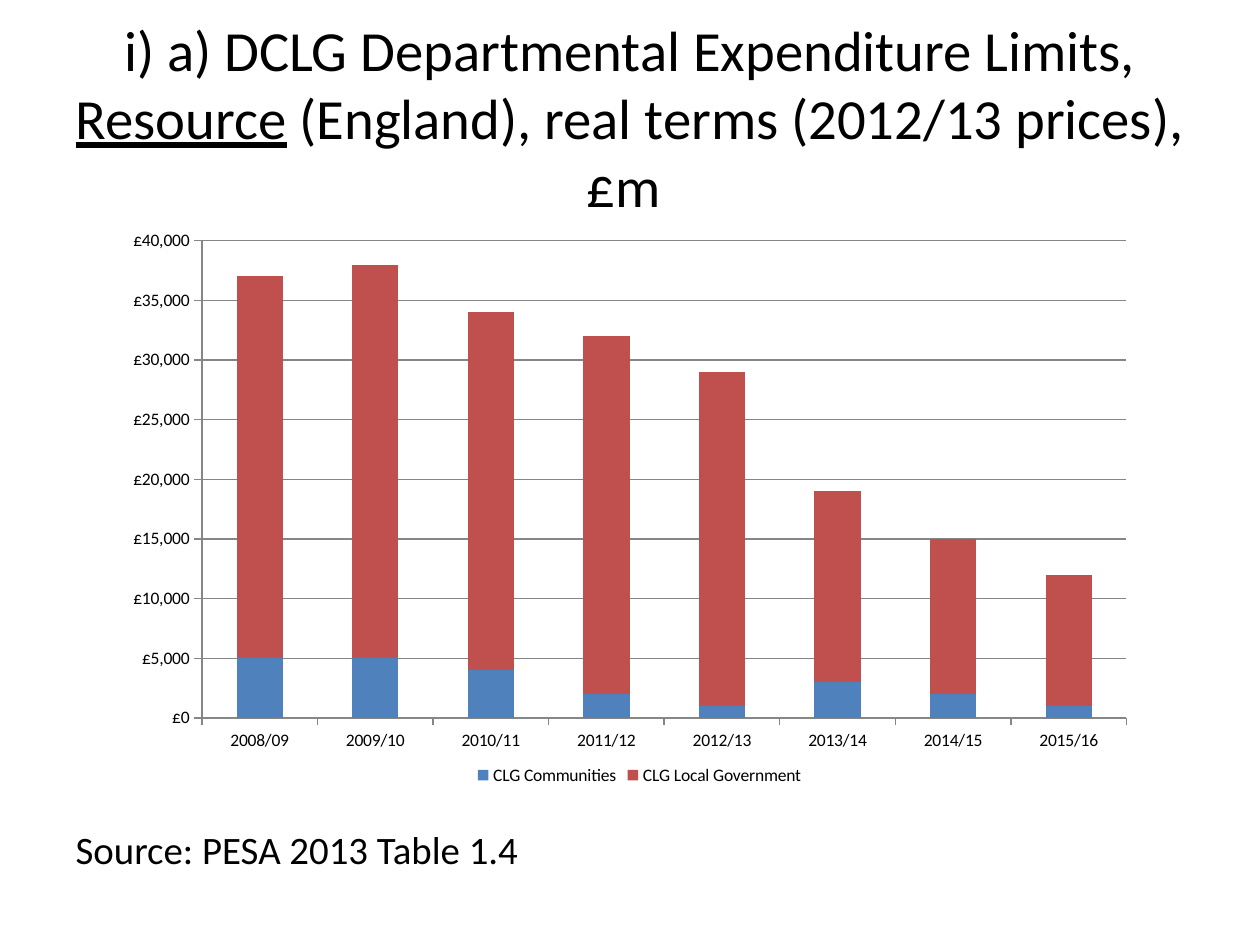
"""Build a slide with a stacked column chart of departmental spending limits."""
import dataclasses
import typing

import lxml.etree
import pptx
import pptx.chart.data
import pptx.dml.color
import pptx.enum.chart
import pptx.enum.text
import pptx.oxml
import pptx.oxml.ns
import pptx.util

BLACK = pptx.dml.color.RGBColor(0x00, 0x00, 0x00)
GREY = pptx.dml.color.RGBColor(0x86, 0x86, 0x86)
BLUE = pptx.dml.color.RGBColor(0x4F, 0x81, 0xBD)
RED = pptx.dml.color.RGBColor(0xC0, 0x50, 0x4D)
FACE = "Calibri"
MONEY = '"£"#,##0'
WIDE = pptx.util.Inches(10)
HIGH = pptx.util.Inches(7.5)


class Box(typing.NamedTuple):
    """Hold a place in percent of the slide's width and height."""
    left: float
    top: float
    width: float
    height: float

    def scale(self) -> list[int]:
        sides = (WIDE, HIGH, WIDE, HIGH)
        return [round(part * side / 100) for part, side in zip(self, sides)]


@dataclasses.dataclass
class Series:
    name: str
    color: pptx.dml.color.RGBColor
    vals: tuple[int, ...]


class Piece(typing.NamedTuple):
    text: str
    under: bool = False


TITLE = (
    Piece("i) a) DCLG Departmental Expenditure Limits, "),
    Piece("Resource", True),
    Piece(" (England), real terms (2012/13 prices), £m "),
)
YEARS = ("2008/09", "2009/10", "2010/11", "2011/12",
         "2012/13", "2013/14", "2014/15", "2015/16")
SERIES = (
    Series("CLG Communities", BLUE,
           (5000, 5000, 4000, 2000, 1000, 3000, 2000, 1000)),
    Series("CLG Local Government", RED,
           (32000, 33000, 30000, 30000, 28000, 16000, 13000, 11000)),
)
TITLE_BOX = Box(5, 4, 90, 16.67)
CHART_BOX = Box(9.8, 22.67, 81.9, 60.93)
NOTE_BOX = Box(5, 85.8, 90, 8)
PLOT = Box(7.6, 4.6, 89.6, 82.9)


def style(font, size: float) -> None:
    font.name = FACE
    font.size = pptx.util.Pt(size)
    font.color.rgb = BLACK


def fill_text(shape, box: Box, parts: tuple[Piece, ...], size: float, align) -> None:
    shape.left, shape.top, shape.width, shape.height = box.scale()
    frame = shape.text_frame
    frame.word_wrap = True
    frame.auto_size = pptx.enum.text.MSO_AUTO_SIZE.NONE
    frame.vertical_anchor = pptx.enum.text.MSO_ANCHOR.MIDDLE
    line = frame.paragraphs[0]
    line.alignment = align
    for part in parts:
        run = line.add_run()
        run.text = part.text
        style(run.font, size)
        run.font.underline = part.under


def drop_bullet(line) -> None:
    props = line._p.get_or_add_pPr()
    props.set("marL", "0")
    props.set("indent", "0")
    lxml.etree.SubElement(props, pptx.oxml.ns.qn("a:buNone"))


def place_plot(chart) -> None:
    rules = [("layoutTarget", "inner"), ("xMode", "edge"), ("yMode", "edge")]
    rules += [(key, f"{part / 100:.3f}") for key, part in zip("xywh", PLOT)]
    area = chart._chartSpace.chart.plotArea
    for old in area.findall(pptx.oxml.ns.qn("c:layout")):
        area.remove(old)
    layout = pptx.oxml.parse_xml(f"<c:layout {pptx.oxml.ns.nsdecls('c')}/>")
    area.insert(0, layout)
    manual = lxml.etree.SubElement(layout, pptx.oxml.ns.qn("c:manualLayout"))
    for key, val in rules:
        lxml.etree.SubElement(manual, pptx.oxml.ns.qn(f"c:{key}")).set("val", val)


def draw_chart(slide) -> None:
    data = pptx.chart.data.CategoryChartData(number_format=MONEY)
    data.categories = YEARS
    for item in SERIES:
        data.add_series(item.name, item.vals)
    kind = pptx.enum.chart.XL_CHART_TYPE.COLUMN_STACKED
    chart = slide.shapes.add_chart(kind, *CHART_BOX.scale(), data).chart
    style(chart.font, 10)
    chart.has_title = False
    chart.has_legend = True
    chart.legend.position = pptx.enum.chart.XL_LEGEND_POSITION.BOTTOM
    chart.legend.include_in_layout = False
    plot = chart.plots[0]
    plot.gap_width, plot.overlap = 150, 100
    plot.vary_by_categories = False
    for series, item in zip(plot.series, SERIES):
        series.format.fill.solid()
        series.format.fill.fore_color.rgb = item.color
    scale = chart.value_axis
    scale.minimum_scale, scale.maximum_scale, scale.major_unit = 0, 40000, 5000
    scale.has_major_gridlines = True
    scale.tick_labels.number_format = MONEY
    scale.tick_labels.number_format_is_linked = False
    for part in (scale, chart.category_axis, scale.major_gridlines):
        part.format.line.color.rgb = GREY
        part.format.line.width = pptx.util.Pt(0.75)
    for axis in (scale, chart.category_axis):
        axis.major_tick_mark = pptx.enum.chart.XL_TICK_MARK.OUTSIDE
    place_plot(chart)


def main() -> None:
    deck = pptx.Presentation()
    deck.slide_width, deck.slide_height = WIDE, HIGH
    slide = deck.slides.add_slide(deck.slide_layouts[1])
    title, note = slide.placeholders
    align = pptx.enum.text.PP_ALIGN
    fill_text(title, TITLE_BOX, TITLE, 32.4, align.CENTER)
    fill_text(note, NOTE_BOX, (Piece("Source: PESA 2013 Table 1.4"),), 22.2, align.LEFT)
    drop_bullet(note.text_frame.paragraphs[0])
    draw_chart(slide)
    deck.save("out.pptx")


if __name__ == "__main__":
    main()
